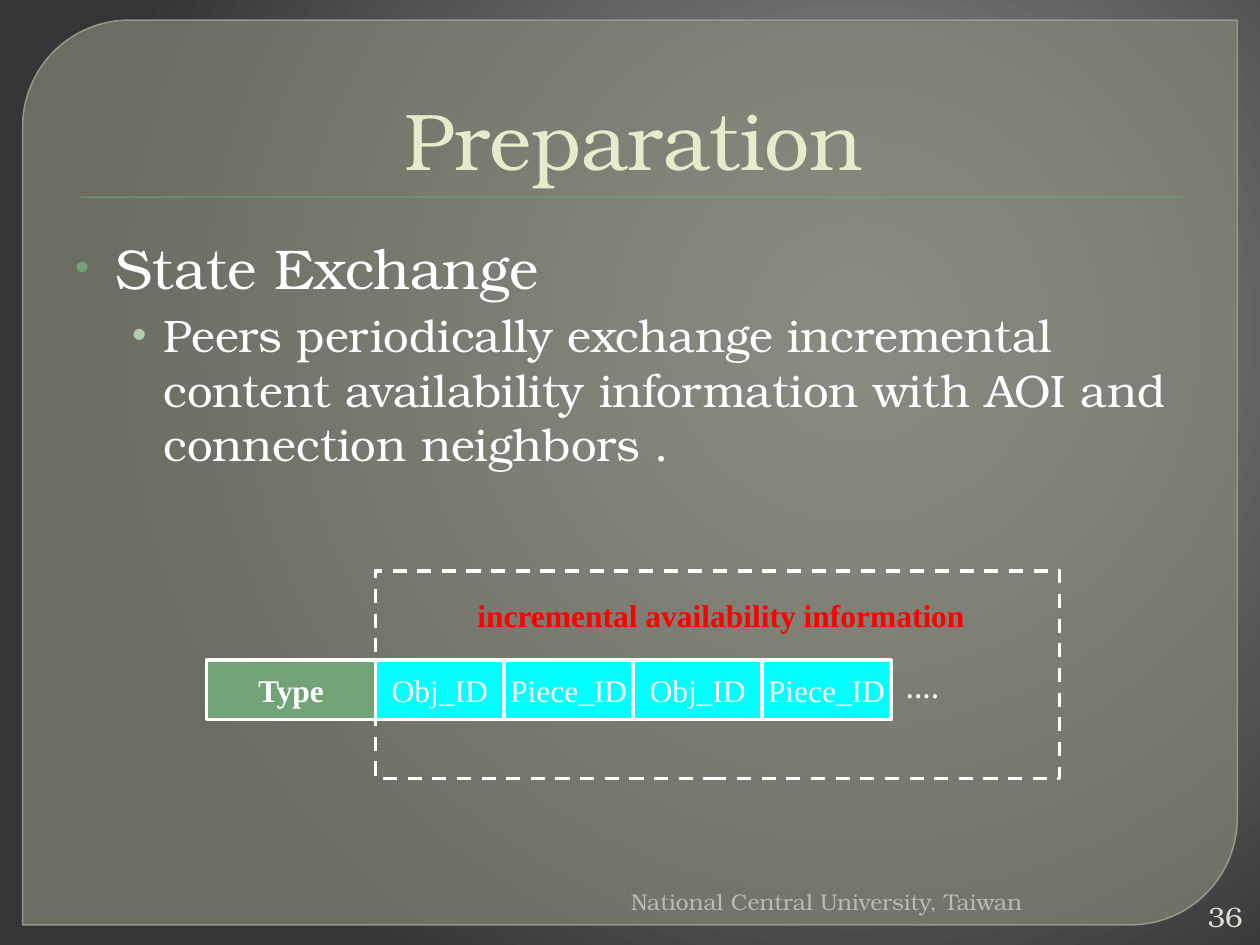
from lxml import etree
from pptx import Presentation
from pptx.dml.color import RGBColor
from pptx.enum.dml import MSO_LINE
from pptx.enum.shapes import MSO_SHAPE
from pptx.enum.text import MSO_ANCHOR, MSO_AUTO_SIZE, PP_ALIGN
from pptx.oxml import parse_xml
from pptx.oxml.ns import nsdecls, qn
from pptx.util import Inches, Pt

RECTANGLE = MSO_SHAPE.RECTANGLE
PANEL = MSO_SHAPE.ROUND_2_DIAG_RECTANGLE
DASH = MSO_LINE.DASH
LEFT, CENTER, RIGHT = PP_ALIGN.LEFT, PP_ALIGN.CENTER, PP_ALIGN.RIGHT
TOP, MIDDLE, BOTTOM = MSO_ANCHOR.TOP, MSO_ANCHOR.MIDDLE, MSO_ANCHOR.BOTTOM
NO_FIT = MSO_AUTO_SIZE.NONE

SERIF, CELL_FONT, DOT_FONT = "TeX Gyre Bonum", "Times New Roman", "Arial"
COLORS = {
    "white": "FFFFFF", "green": "72A376", "light_green": "B0CCB0",
    "title": "E7EACB", "footer": "B9BBB2", "number": "E0E0D4",
    "panel": "888B7B", "panel_line": "9DA090",
    "cyan": "00FFFF", "red": "FF0000", "black": "000000",
}
BACKGROUND_STOPS = [(0, "8C8C8C"), (20, "7F7F7F"), (100, "353535")]
FIELDS = ["Obj_ID", "Piece_ID"] * 2


def rgb(name):
    """Return the named colour."""
    return RGBColor.from_string(COLORS[name])


def set_background(slide):
    """Fill the slide with a circular gradient."""
    slide.background.fill.solid()
    solid = slide.element.find(".//" + qn("p:bgPr")).find(qn("a:solidFill"))
    stops = "".join(
        f'<a:gs pos="{position * 1000}"><a:srgbClr val="{color}"/></a:gs>'
        for position, color in BACKGROUND_STOPS)
    gradient = parse_xml(
        f'<a:gradFill {nsdecls("a")} rotWithShape="1"><a:gsLst>{stops}</a:gsLst>'
        '<a:path path="circle"><a:fillToRect l="68000" t="35000" r="32000" b="65000"/>'
        '</a:path></a:gradFill>')
    solid.getparent().replace(solid, gradient)


def set_alpha(element, percent):
    """Make the solid colour inside an element partly transparent."""
    color = next(element.iter(qn("a:srgbClr")))
    etree.SubElement(color, qn("a:alpha"), val=str(percent * 1000))


def add_box(shapes, box, fill=None, line=None, width=2, dash=None, kind=RECTANGLE):
    """Add a preset shape with the given fill and outline."""
    shape = shapes.add_shape(kind, *map(Inches, box))
    shape.shadow.inherit = False
    if fill:
        shape.fill.solid()
        shape.fill.fore_color.rgb = rgb(fill)
    else:
        shape.fill.background()
    if line:
        shape.line.color.rgb = rgb(line)
        shape.line.width = Pt(width)
        if dash:
            shape.line.dash_style = dash
    else:
        shape.line.fill.background()
    return shape


def write(frame, text, size, color="white", font=SERIF, bold=False, align=LEFT,
          anchor=TOP, wrap=True, added=False):
    """Write one formatted paragraph into a text frame and return it."""
    frame.word_wrap = wrap
    frame.auto_size = NO_FIT
    frame.vertical_anchor = anchor
    paragraph = frame.add_paragraph() if added else frame.paragraphs[0]
    paragraph.alignment = align
    run = paragraph.add_run()
    run.text = text
    run.font.name = font
    run.font.size = Pt(size)
    run.font.bold = bold
    run.font.color.rgb = rgb(color)
    return paragraph


def add_text(shapes, box, text, size, **style):
    """Add a text box holding one paragraph and return its frame."""
    frame = shapes.add_textbox(*map(Inches, box)).text_frame
    write(frame, text, size, **style)
    return frame


def set_bullet(paragraph, color, percent, margin, indent):
    """Give a paragraph a round bullet and a hanging indent."""
    properties = paragraph._p.get_or_add_pPr()
    properties.set("marL", str(Inches(margin)))
    properties.set("indent", str(Inches(indent)))
    bullet_color = etree.SubElement(properties, qn("a:buClr"))
    etree.SubElement(bullet_color, qn("a:srgbClr"), val=COLORS[color])
    etree.SubElement(properties, qn("a:buSzPct"), val=str(percent * 1000))
    etree.SubElement(properties, qn("a:buFont"), typeface=DOT_FONT)
    etree.SubElement(properties, qn("a:buChar"), char="•")


def add_frame(shapes):
    """Draw the translucent panel and the rule under the title."""
    panel = add_box(shapes, (0.18, 0.16, 9.64, 7.18), "panel", "panel_line", 0.87, kind=PANEL)
    panel.adjustments[0] = 0.118
    panel.adjustments[1] = 0
    set_alpha(panel._element.spPr.find(qn("a:solidFill")), 65)
    set_alpha(panel._element.spPr.find(qn("a:ln")), 88)
    rule = add_box(shapes, (0.64, 1.56, 8.75, 0.01), "green")
    effects = rule._element.spPr.find(qn("a:effectLst"))
    shadow = etree.SubElement(effects, qn("a:outerShdw"), blurRad=str(Pt(1)),
                              dist=str(Pt(1)), dir="5400000")
    etree.SubElement(shadow, qn("a:srgbClr"), val=COLORS["black"])
    set_alpha(shadow, 75)


def set_title(title, text):
    """Place and format the title placeholder."""
    title.left, title.top, title.width, title.height = map(Inches, (0.5, 0.28, 9, 1.25))
    paragraph = write(title.text_frame, text, 46, color="title", align=CENTER, anchor=BOTTOM)
    paragraph._p.get_or_add_pPr().set("marL", str(Inches(0.06)))


def add_body(shapes):
    """Add the two-level bullet list."""
    frame = add_text(shapes, (0.5, 1.8, 9, 4.95), "State Exchange", 32)
    set_bullet(frame.paragraphs[0], "green", 70, 0.32, -0.32)
    detail = write(frame, "Peers periodically exchange incremental content availability "
                   "information with AOI and connection neighbors .", 26, added=True)
    detail.level = 1
    set_bullet(detail, "light_green", 90, 0.7, -0.25)
    detail.space_before = Pt(4)


def add_cell(shapes, left, width, text, fill, bold=False):
    """Add one field of the message."""
    cell = add_box(shapes, (left, 5.24, width, 0.47), fill, "white")
    write(cell.text_frame, text, 18, font=CELL_FONT, bold=bold, align=CENTER,
          anchor=MIDDLE, wrap=False)


def add_message(shapes):
    """Draw the message layout as a group."""
    parts = shapes.add_group_shape().shapes
    fields_left, field_width = 2.98, 1.023
    add_cell(parts, 1.64, 1.34, "Type", "green", bold=True)
    for index, text in enumerate(FIELDS):
        add_cell(parts, fields_left + index * field_width, field_width, text, "cyan")
    add_text(parts, (7.09, 5.29, 1.2, 0.4), "‧‧‧‧", 18, font=DOT_FONT, wrap=False)
    add_box(parts, (fields_left, 4.53, 5.43, 1.65), line="white", dash=DASH)
    add_text(parts, (3.69, 4.68, 4.08, 0.4), "incremental availability information", 18,
             color="red", font=CELL_FONT, bold=True, wrap=False)


def main():
    """Build and save the slide."""
    presentation = Presentation()
    presentation.slide_width, presentation.slide_height = Inches(10), Inches(7.5)
    slide = presentation.slides.add_slide(presentation.slide_layouts[5])
    shapes = slide.shapes
    set_background(slide)
    add_frame(shapes)
    title = shapes.title
    shapes._spTree.append(title._element)
    set_title(title, "Preparation")
    add_body(shapes)
    add_text(shapes, (3.6, 7, 4.61, 0.3), "National Central University, Taiwan", 13,
             color="footer", align=RIGHT)
    add_text(shapes, (9.45, 7.12, 0.51, 0.3), "36", 16, color="number", align=RIGHT,
             anchor=MIDDLE)
    add_message(shapes)
    presentation.save("out.pptx")


if __name__ == "__main__":
    main()
